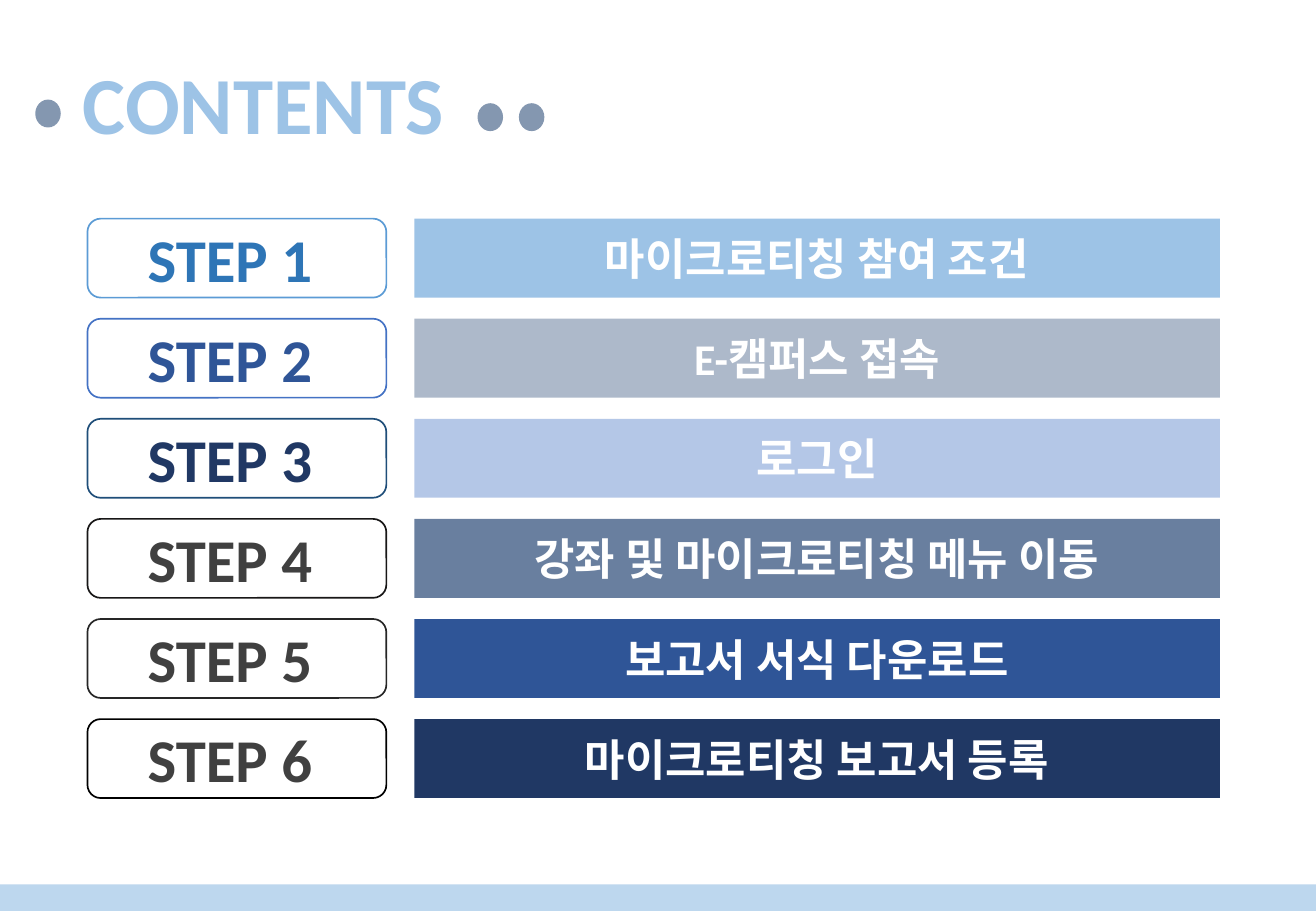
from pptx import Presentation
from pptx.dml.color import RGBColor as RGB
from pptx.enum.shapes import MSO_SHAPE as SHAPE
from pptx.enum.text import MSO_ANCHOR as ANCHOR, PP_ALIGN as ALIGN
from pptx.util import Inches, Pt

COLORS = {"title": "9DC3E6", "dot": "8497B0", "footer": "BDD7EE", "white": "FFFFFF"}

# label, box outline, step text colour, bar fill
STEPS = [
    ("마이크로티칭 참여 조건", "5B9BD5", "2E75B6", "9DC3E6"),
    ("E-캠퍼스 접속", "4472C4", "2F5597", "ADB9CA"),
    ("로그인", "1F4E79", "203864", "B4C7E7"),
    ("강좌 및 마이크로티칭 메뉴 이동", "181717", "404040", "697F9F"),
    ("보고서 서식 다운로드", "262626", "404040", "2F5597"),
    ("마이크로티칭 보고서 등록", "000000", "404040", "203864"),
]
FIRST_TOP, LAST_TOP = 1.8, 5.92
PITCH = (LAST_TOP - FIRST_TOP) / (len(STEPS) - 1)


def add_box(kind, left, top, width, height, fill, line=None):
    sp = s.shapes.add_shape(kind, Inches(left), Inches(top), Inches(width), Inches(height))
    sp.shadow.inherit = False
    sp.fill.solid()
    sp.fill.fore_color.rgb = RGB.from_string(fill)
    if line:
        sp.line.color.rgb = RGB.from_string(line)
        sp.line.width = Pt(1)
    else:
        sp.line.fill.background()
    return sp


def write(sp, text, size, color):
    tf = sp.text_frame
    tf.text = text
    tf.word_wrap = True
    p = tf.paragraphs[0]
    p.alignment = ALIGN.CENTER
    font = p.runs[0].font
    font.name, font.size, font.bold = "Calibri", Pt(size), True
    font.color.rgb = RGB.from_string(color)
    return tf


prs = Presentation()
prs.slide_width, prs.slide_height = Inches(10.83), Inches(7.5)
s = prs.slides.add_slide(prs.slide_layouts[6])

# Title
title = s.shapes.add_textbox(Inches(0.42), Inches(0.39), Inches(3.5), Inches(0.91))
write(title, "CONTENTS", 48, COLORS["title"])

# Footer band and dots around the title
add_box(SHAPE.RECTANGLE, 0, 7.28, 10.83, 0.22, COLORS["footer"])
for left, top in [(3.93, 0.85), (4.27, 0.85), (0.29, 0.82)]:
    add_box(SHAPE.OVAL, left, top, 0.21, 0.23, COLORS["dot"])

# Steps: numbered box and labelled bar
for i, (label, outline, ink, fill) in enumerate(STEPS):
    top = FIRST_TOP + i * PITCH
    box = add_box(SHAPE.ROUNDED_RECTANGLE, 0.72, top, 2.46, 0.65, COLORS["white"], outline)
    bar = add_box(SHAPE.RECTANGLE, 3.41, top, 6.63, 0.65, fill)
    for tf in (write(box, f"STEP {i + 1} ", 36, ink),
               write(bar, label, 26, COLORS["white"])):
        tf.vertical_anchor = ANCHOR.MIDDLE
        tf.margin_left = tf.margin_right = Inches(0.07)
        tf.margin_top = tf.margin_bottom = Inches(0.04)

prs.save("out.pptx")
